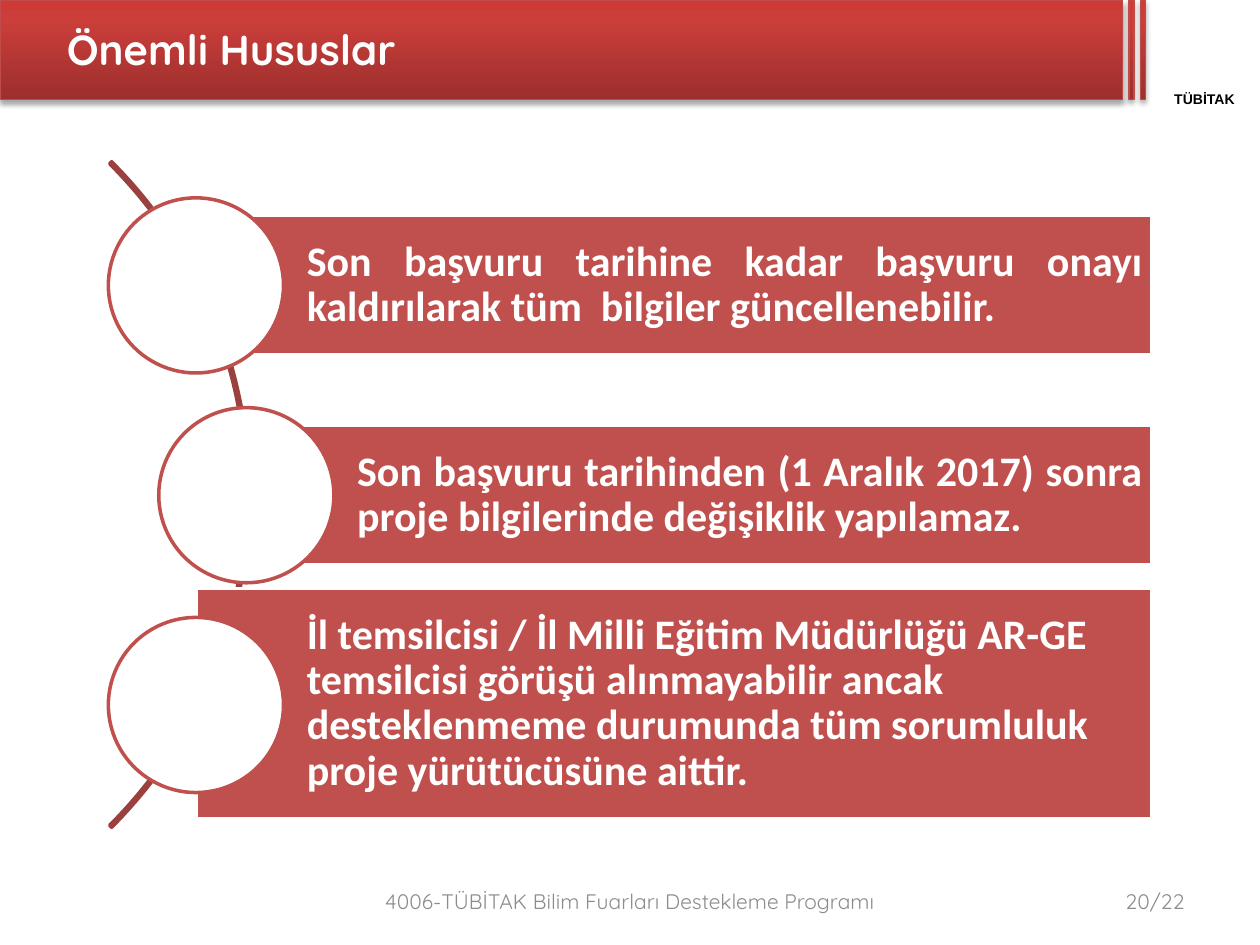
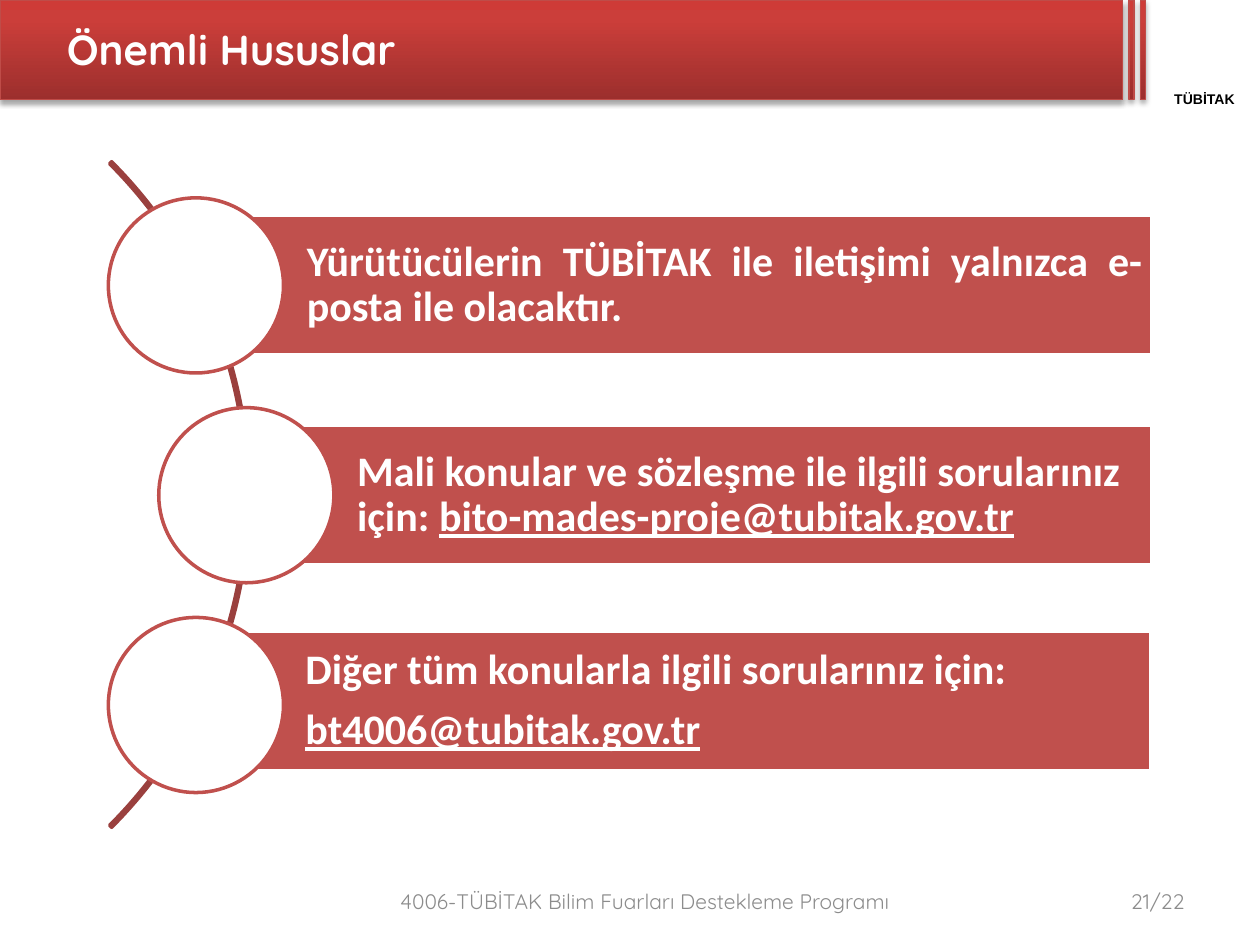
from copy import deepcopy
from dataclasses import dataclass

from lxml import etree
from pptx import Presentation
from pptx.dml.color import RGBColor
from pptx.enum.shapes import MSO_SHAPE
from pptx.enum.text import MSO_ANCHOR, PP_ALIGN
from pptx.oxml.ns import qn
from pptx.util import Inches, Pt

RECTANGLE, OVAL, BLOCK_ARC = MSO_SHAPE.RECTANGLE, MSO_SHAPE.OVAL, MSO_SHAPE.BLOCK_ARC
LEFT, CENTER, RIGHT, JUSTIFY = PP_ALIGN.LEFT, PP_ALIGN.CENTER, PP_ALIGN.RIGHT, PP_ALIGN.JUSTIFY
MIDDLE, TOP = MSO_ANCHOR.MIDDLE, MSO_ANCHOR.TOP
TITLE_ONLY = 5


@dataclass(frozen=True)
class Theme:
    white: str = "FFFFFF"
    black: str = "000000"
    red: str = "C0504D"
    arc: str = "9A403E"
    band_line: str = "BF4C48"
    band_stops: tuple = ((0, "9C2F2D"), (0.8, "CB3E3A"), (1, "CE3B37"))
    grey: str = "8C8C8C"
    heading_font: str = "Quicksand"
    body_font: str = "Calibri"
    label_font: str = "Arial"
    large: int = 24
    footer: int = 12
    label: int = 8
    line: float = 2
    band_edge: float = 0.75


@dataclass(frozen=True)
class Item:
    paragraphs: tuple
    align: int = LEFT
    height: float = 1.11
    nudge: tuple = (0, 0)


THEME = Theme()
TITLE_STYLE = {"name": THEME.heading_font, "size": Pt(THEME.large), "bold": True}
BODY_STYLE = {"name": THEME.body_font, "size": Pt(THEME.large), "bold": True}
FOOTER_STYLE = {"name": THEME.heading_font, "size": Pt(THEME.footer), "bold": False}
LABEL_STYLE = {"name": THEME.label_font, "size": Pt(THEME.label), "bold": True}

BAND_HEIGHT = 0.79
BANDS = ((0, 8.91), (8.96, 0.04), (9.05, 0.04))
CIRCLE_SIZE = 1.39
CIRCLE_LEFTS = (0.86, 1.26, 0.86)
FIRST_CENTER = 2.265
ROW_STEP = 1.665
BAR_RIGHT = 9.14
PROGRAM = "4006-TÜBİTAK Bilim Fuarları Destekleme Programı"

SLIDES = (
    {
        "title": "Önemli Hususlar",
        "number": "20/22",
        "footer_left": 2.48,
        "items": (
            Item(((("Son başvuru tarihine kadar başvuru onayı kaldırılarak "
                    "tüm  bilgiler güncellenebilir.", False),),), JUSTIFY),
            Item(((("Son başvuru tarihinden (1 Aralık 2017) sonra proje "
                    "bilgilerinde değişiklik yapılamaz.", False),),), JUSTIFY),
            Item(((("İl temsilcisi / İl Milli Eğitim Müdürlüğü AR-GE temsilcisi "
                    "görüşü alınmayabilir ancak desteklenmeme durumunda tüm "
                    "sorumluluk proje yürütücüsüne aittir.", False),),),
                 height=1.83, nudge=(0, -0.01)),
        ),
    },
    {
        "title": "Önemli Hususlar",
        "number": "21/22",
        "footer_left": 2.72,
        "items": (
            Item(((("Yürütücülerin TÜBİTAK ile iletişimi yalnızca e-posta "
                    "ile olacaktır.", False),),), JUSTIFY),
            Item(((("Mali konular ve sözleşme ile ilgili sorularınız için: ", False),
                   ("bito-mades-proje@tubitak.gov.tr", True)),)),
            Item(((("Diğer tüm konularla ilgili sorularınız için:", False),),
                  (("bt4006@tubitak.gov.tr", True),)), nudge=(-0.01, -0.03)),
        ),
    },
)


def set_values(target, values):
    for name, value in values.items():
        setattr(target, name, value)


def set_frame(frame, anchor, insets=None):
    frame.word_wrap = True
    frame.vertical_anchor = anchor
    if insets:
        sides = ("margin_left", "margin_top", "margin_right", "margin_bottom")
        set_values(frame, dict(zip(sides, map(Inches, insets))))


def add_span(para, text, style, color, underline=False):
    span = para.add_run()
    span.text = text
    set_values(span.font, style)
    span.font.color.rgb = RGBColor.from_string(color)
    if underline:
        span.font.underline = True


def add_shape(page, kind, box, fill, line, width):
    shape = page.shapes.add_shape(kind, *map(Inches, box))
    shape.shadow.inherit = False
    if fill:
        shape.fill.solid()
        shape.fill.fore_color.rgb = RGBColor.from_string(fill)
    else:
        shape.fill.background()
    shape.line.color.rgb = RGBColor.from_string(line)
    shape.line.width = Pt(width)
    return shape


def add_text(page, box, text, style, color, align, anchor=MIDDLE, insets=None):
    shape = page.shapes.add_textbox(*map(Inches, box))
    set_frame(shape.text_frame, anchor, insets)
    para = shape.text_frame.paragraphs[0]
    para.alignment = align
    add_span(para, text, style, color)
    return shape


def add_band(page, left, width):
    band = add_shape(page, RECTANGLE, (left, 0, width, BAND_HEIGHT), None,
                     THEME.band_line, THEME.band_edge)
    band.fill.gradient()
    band.fill.gradient_angle = 90
    properties = band._element.spPr
    stop_list = properties.find(qn("a:gradFill")).find(qn("a:gsLst"))
    stop_list.append(deepcopy(stop_list[0]))
    for stop, (position, color) in zip(band.fill.gradient_stops, THEME.band_stops):
        stop.position = position
        stop.color.rgb = RGBColor.from_string(color)
    shadow = etree.SubElement(properties.find(qn("a:effectLst")), qn("a:outerShdw"),
                              blurRad=str(Pt(3.1)), dist=str(Pt(1.8)),
                              dir="5400000", rotWithShape="0")
    color = etree.SubElement(shadow, qn("a:srgbClr"), val=THEME.black)
    etree.SubElement(color, qn("a:alpha"), val="35000")
    return band


def add_shared_header(page, layout):
    shared = [add_band(page, left, width) for left, width in BANDS]
    shared.append(add_text(page, (9.05, 0.72, 1.02, 0.13), "TÜBİTAK", LABEL_STYLE,
                           THEME.black, CENTER, TOP, (0, 0, 0, 0)))
    for index, shape in enumerate(shared):
        shape._element.nvSpPr.cNvPr.set("id", str(100 + index))
        layout.shapes._spTree.insert(2 + index, shape._element)


def set_title(page, text):
    title = page.shapes.title
    box = map(Inches, (0.43, 0, 8.5, 0.77))
    set_values(title, dict(zip(("left", "top", "width", "height"), box)))
    set_frame(title.text_frame, MIDDLE)
    para = title.text_frame.paragraphs[0]
    para.alignment = LEFT
    add_span(para, text, TITLE_STYLE, THEME.white)


def add_arc(page):
    arc = add_shape(page, BLOCK_ARC, (-5.49, 0.19, 7.47, 7.47), None, THEME.arc, THEME.line)
    for index, value in enumerate((189, 27, 0.003)):
        arc.adjustments[index] = value


def add_item(page, item, circle_left, center):
    radius = CIRCLE_SIZE / 2
    left = circle_left + radius
    shift_x, shift_y = item.nudge
    box = (left + shift_x, center - item.height / 2 + shift_y, BAR_RIGHT - left, item.height)
    bar = add_shape(page, RECTANGLE, box, THEME.red, THEME.white, THEME.line)
    frame = bar.text_frame
    set_frame(frame, MIDDLE, (0.88, 0.07, 0.07, 0.07))
    for index, spans in enumerate(item.paragraphs):
        para = frame.add_paragraph() if index else frame.paragraphs[0]
        set_values(para, {"alignment": item.align, "line_spacing": 0.9,
                          "space_after": Pt(8.4)})
        for text, underline in spans:
            add_span(para, text, BODY_STYLE, THEME.white, underline)
    add_shape(page, OVAL, (circle_left, center - radius, CIRCLE_SIZE, CIRCLE_SIZE),
              THEME.white, THEME.red, THEME.line)


def add_footer(page, left, number):
    add_text(page, (left, 6.95, 7.52 - left, 0.4), PROGRAM, FOOTER_STYLE, THEME.grey, CENTER)
    add_text(page, (7.17, 6.95, 2.33, 0.4), number, FOOTER_STYLE, THEME.grey, RIGHT)


def main():
    deck = Presentation()
    deck.slide_width, deck.slide_height = Inches(10), Inches(7.5)
    layout = deck.slide_layouts[TITLE_ONLY]
    for index, content in enumerate(SLIDES):
        page = deck.slides.add_slide(layout)
        if index == 0:
            add_shared_header(page, layout)
        set_title(page, content["title"])
        add_arc(page)
        for row, (item, circle_left) in enumerate(zip(content["items"], CIRCLE_LEFTS)):
            add_item(page, item, circle_left, FIRST_CENTER + row * ROW_STEP)
        add_footer(page, content["footer_left"], content["number"])
    deck.save("out.pptx")


if __name__ == "__main__":
    main()
